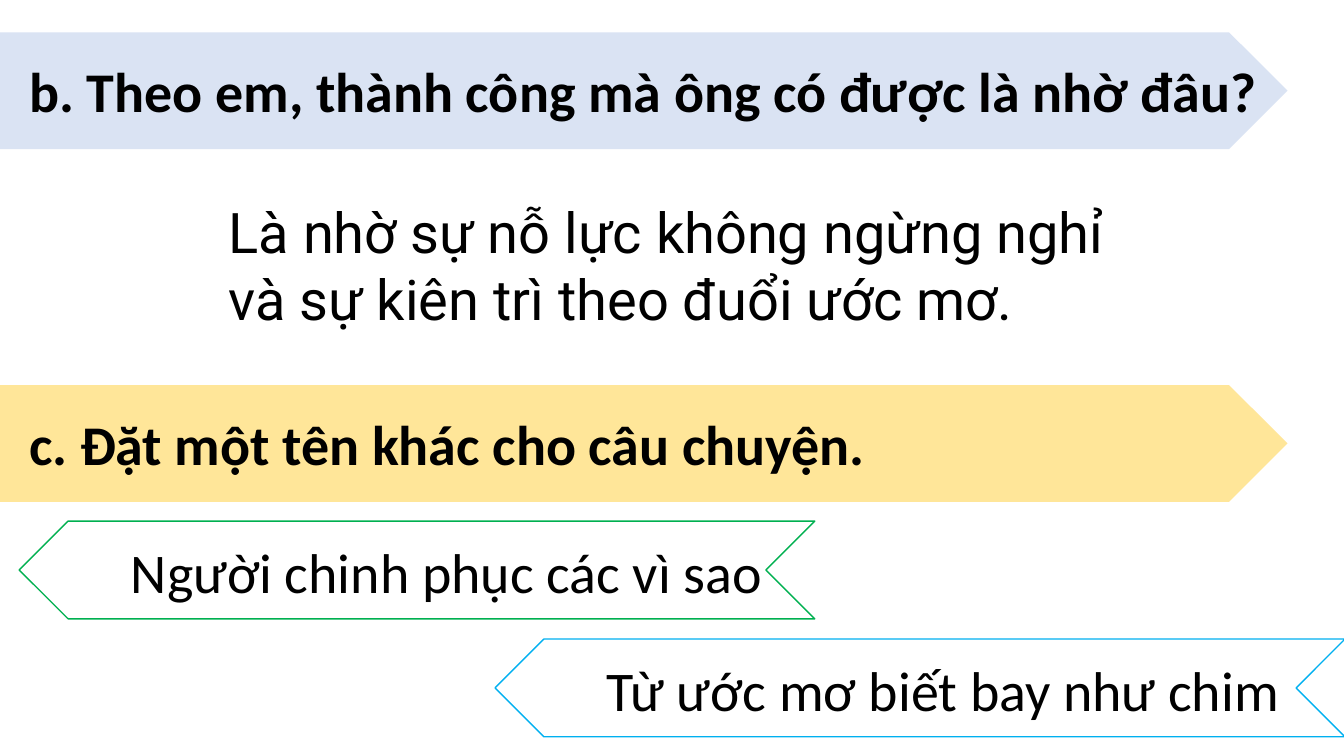
from lxml.etree import SubElement
from pptx import Presentation
from pptx.dml.color import RGBColor
from pptx.enum.shapes import MSO_SHAPE
from pptx.enum.text import MSO_ANCHOR, MSO_AUTO_SIZE, PP_ALIGN
from pptx.oxml.ns import qn
from pptx.util import Inches, Pt

WIDTH, HEIGHT = Inches(13.33), Inches(7.5)
LINE_HEIGHT = 10.27


def grid(left, top, width, height):
    """Turn hundredths of the slide's width and height into lengths."""
    return (int(WIDTH * left / 100), int(HEIGHT * top / 100),
            int(WIDTH * width / 100), int(HEIGHT * height / 100))


def paint(color_format, color):
    """Set a fill or font colour from a hex string."""
    color_format.rgb = RGBColor.from_string(color)


def add_plate(shapes, preset, box, color, outline=None):
    """Add a filled preset shape with an optional outline."""
    plate = shapes.add_shape(preset, *grid(*box))
    plate.shadow.inherit = False
    plate.fill.solid()
    paint(plate.fill.fore_color, color)
    if outline:
        plate.line.width = Pt(1)
        paint(plate.line.color, outline)
    else:
        plate.line.fill.background()
    return plate


def write(holder, wording, font="Calibri", bold=False):
    """Put left-aligned black wording into a text holder."""
    frame = holder.text_frame
    frame.text = wording
    frame.word_wrap = True
    frame.auto_size = MSO_AUTO_SIZE.SHAPE_TO_FIT_TEXT
    frame.vertical_anchor = MSO_ANCHOR.TOP
    paragraph = frame.paragraphs[0]
    paragraph.alignment = PP_ALIGN.LEFT
    for run in paragraph.runs:
        run.font.name = font
        run.font.size = Pt(40)
        run.font.bold = bold
        paint(run.font.color, "000000")


def add_banner(shapes, top, color):
    """Add a question banner that starts at the slide's left edge."""
    add_plate(shapes, MSO_SHAPE.PENTAGON, (0, top, 95.8, 15.47), color)


def add_heading(slide, wording, top, color):
    """Set the title on a question banner."""
    add_banner(slide.shapes, top, color)
    title = slide.shapes.title
    title.left, title.top, title.width, title.height = grid(
        1.43, top + 2.6, 92.95, LINE_HEIGHT)
    write(title, wording, bold=True)
    slide.shapes._spTree.append(title._element)


def add_question(slide, wording, top, color):
    """Add a further question on its own banner."""
    shapes = slide.shapes.add_group_shape().shapes
    add_banner(shapes, top, color)
    write(shapes.add_textbox(*grid(1.43, top + 2.6, 92.95, 19.33)),
          wording, bold=True)


def add_answer(slide, wording):
    """Add the answer on a translucent rounded plate."""
    shapes = slide.shapes.add_group_shape().shapes
    plate = add_plate(shapes, MSO_SHAPE.ROUNDED_RECTANGLE,
                      (12.08, 24.53, 75.84, 21.07), "FFFFFF")
    plate.adjustments[0] = 0.5
    white = plate.fill._xPr.find(qn("a:solidFill"))[0]
    SubElement(white, qn("a:alpha"), val="90000")
    write(shapes.add_textbox(*grid(16.28, 25.47, 70.07, 19.33)),
          wording, font="Roboto")


def add_story_name(slide, wording, left, top, width, outline):
    """Add a suggested story name on a left-pointing ribbon."""
    shapes = slide.shapes.add_group_shape().shapes
    ribbon = add_plate(shapes, MSO_SHAPE.CHEVRON,
                       (left, top, width, 12.93), "FFFFFF", outline)
    ribbon.rotation = 180
    write(shapes.add_textbox(*grid(left + 7.58, top + 1.53, width - 9.6,
                                   LINE_HEIGHT)), wording)


def main():
    """Build and save the slide."""
    deck = Presentation()
    deck.slide_width, deck.slide_height = WIDTH, HEIGHT
    slide = deck.slides.add_slide(deck.slide_layouts[5])
    add_heading(slide, "b. Theo em, thành công mà ông có được là nhờ đâu?",
                4.27, "DAE3F3")
    add_answer(slide, "Là nhờ sự nỗ lực không ngừng nghỉ "
                      "và sự kiên trì theo đuổi ước mơ.")
    add_question(slide, "c. Đặt một tên khác cho câu chuyện.",
                 50.93, "FFE699")
    add_story_name(slide, "Người chinh phục các vì sao",
                   1.43, 68.93, 59.19, "00B050")
    add_story_name(slide, "Từ ước mơ biết bay như chim",
                   36.83, 84.53, 63.24, "00B0F0")
    deck.save("out.pptx")


if __name__ == "__main__":
    main()
